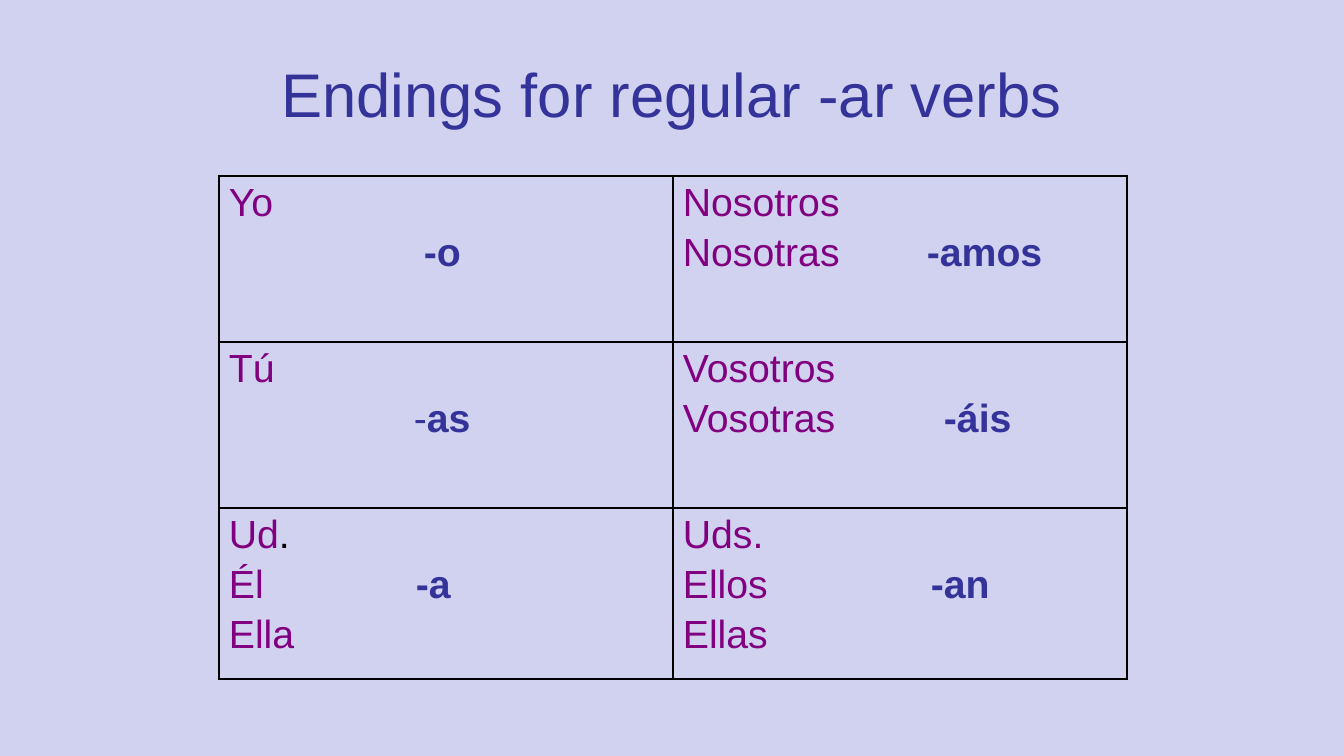
"""Slide with a table of the endings for regular -ar verbs."""
from lxml import etree
from pptx import Presentation, util as u
from pptx.dml.color import RGBColor
from pptx.enum import text
from pptx.oxml.ns import qn

PX = 12192000 / 1344
LAVENDER = RGBColor(0xD1, 0xD1, 0xF0)
BLUE = RGBColor(0x33, 0x33, 0x99)
PURPLE = RGBColor(0x80, 0x00, 0x80)
BLACK = RGBColor(0, 0, 0)
FONT = "Arial"

TITLE = "Endings for regular -ar verbs"
PRONOUN = {"color": PURPLE}
DOT = {"color": BLACK}
DASH = {"color": BLUE}
ENDING = {"color": BLUE, "bold": True}

# Each cell: tab stop of its ending in px, then its lines as (text, format) runs
CELLS = [
    [(195, [[("Yo", PRONOUN)], [("\t", PRONOUN), ("-o", ENDING)]]),
     (244, [[("Nosotros", PRONOUN)], [("Nosotras\t", PRONOUN), ("-amos", ENDING)]])],
    [(185, [[("Tú", PRONOUN)], [("\t", PRONOUN), ("-", DASH), ("as", ENDING)]]),
     (261, [[("Vosotros", PRONOUN)], [("Vosotras\t", PRONOUN), ("-áis", ENDING)]])],
    [(187, [[("Ud", PRONOUN), (".", DOT)], [("Él\t", PRONOUN), ("-a", ENDING)],
            [("Ella", PRONOUN)]]),
     (248, [[("Uds.", PRONOUN)], [("Ellos\t", PRONOUN), ("-an", ENDING)],
            [("Ellas", PRONOUN)]])],
]
TITLE_BOX = (67, 30, 1210, 126)
TABLE_LEFT, TABLE_TOP, COL_WIDTH = 219, 176, 454
ROW_HEIGHTS = [166, 166, 171]
OUTER, INNER = 2.25, 1


def px(n):
    return u.Emu(round(n * PX))


def add_run(p, words, size=28, color=BLACK, bold=False):
    r = p.add_run()
    r.text = words
    r.font.name, r.font.size, r.font.bold = FONT, u.Pt(size), bold
    r.font.color.rgb = color


def set_tab(p, pos):
    tabs = etree.SubElement(p._p.get_or_add_pPr(), qn("a:tabLst"))
    etree.SubElement(tabs, qn("a:tab"), pos=str(px(pos)), algn="l")


def set_borders(cell, widths):
    tc_pr = cell._tc.get_or_add_tcPr()
    for i, (side, width) in enumerate(widths.items()):
        ln = etree.Element(qn(f"a:ln{side}"), w=str(u.Pt(width)))
        fill = etree.SubElement(ln, qn("a:solidFill"))
        etree.SubElement(fill, qn("a:srgbClr"), val=str(BLACK))
        tc_pr.insert(i, ln)


def fill_cell(cell, tab, lines):
    cell.fill.background()
    cell.margin_left = cell.margin_right = px(10)
    cell.margin_top = cell.margin_bottom = px(5)
    tf = cell.text_frame
    for i, runs in enumerate(lines):
        p = tf.add_paragraph() if i else tf.paragraphs[0]
        p.space_before = u.Pt(4.6 if i else 0)
        if any("\t" in words for words, _ in runs):
            set_tab(p, tab)
        for words, style in runs:
            add_run(p, words, **style)


def main():
    prs = Presentation()
    prs.slide_width, prs.slide_height = px(1344), px(756)
    s = prs.slides.add_slide(prs.slide_layouts[5])
    s.background.fill.solid()
    s.background.fill.fore_color.rgb = LAVENDER

    sp = s.shapes.title
    sp.left, sp.top, sp.width, sp.height = map(px, TITLE_BOX)
    tf = sp.text_frame
    tf.vertical_anchor = text.MSO_ANCHOR.MIDDLE
    p = tf.paragraphs[0]
    p.alignment = text.PP_ALIGN.CENTER
    add_run(p, TITLE, size=44, color=BLUE)

    rows, cols = len(CELLS), len(CELLS[0])
    table = s.shapes.add_table(rows, cols, px(TABLE_LEFT), px(TABLE_TOP),
                               px(cols * COL_WIDTH), px(sum(ROW_HEIGHTS))).table
    table.first_row = table.horz_banding = False
    for col in table.columns:
        col.width = px(COL_WIDTH)
    for i, height in enumerate(ROW_HEIGHTS):
        table.rows[i].height = px(height)
        for j, (tab, lines) in enumerate(CELLS[i]):
            cell = table.cell(i, j)
            fill_cell(cell, tab, lines)
            edges = {"L": j == 0, "R": j == cols - 1, "T": i == 0, "B": i == rows - 1}
            set_borders(cell, {side: OUTER if edge else INNER
                               for side, edge in edges.items()})
    prs.save("out.pptx")


if __name__ == "__main__":
    main()
